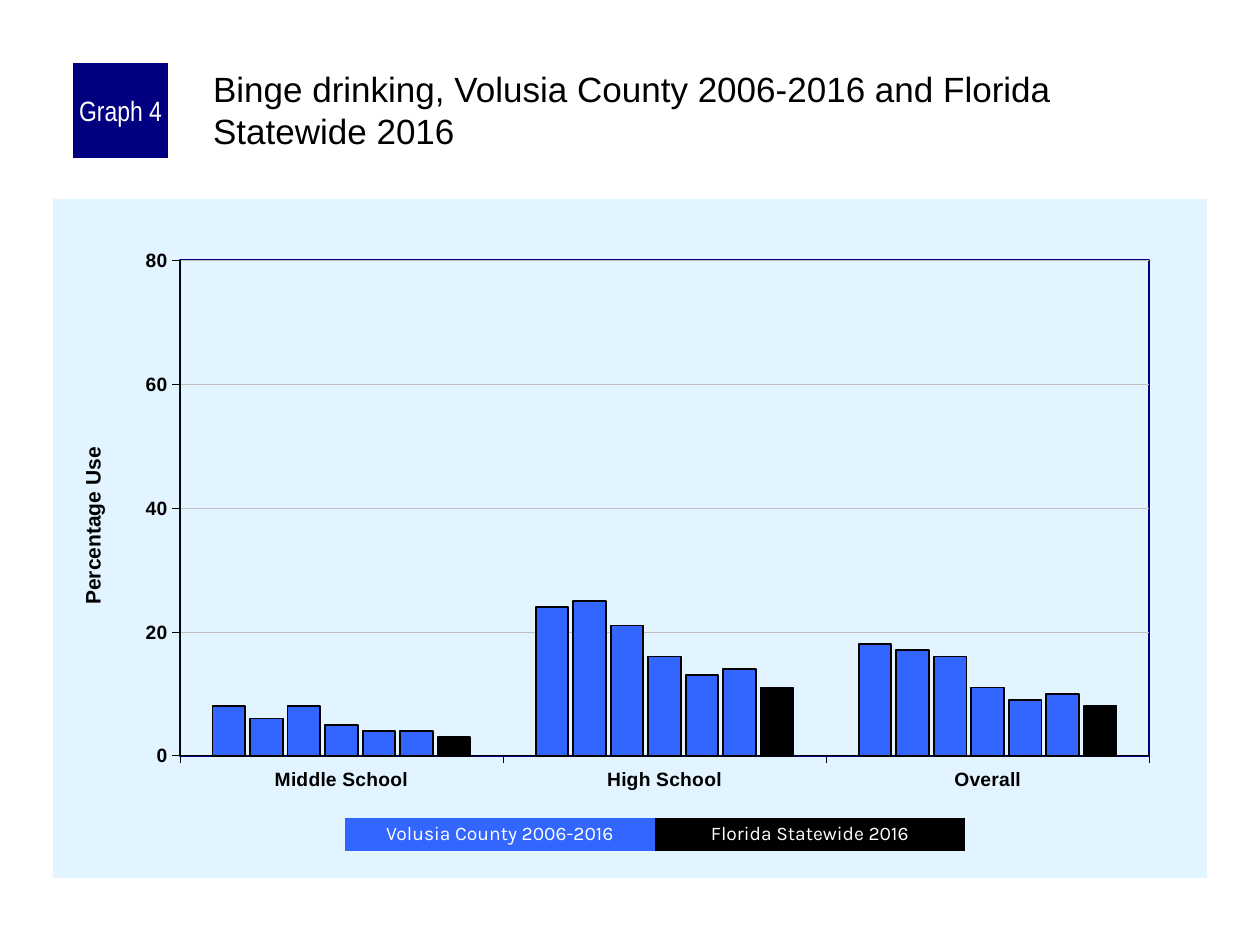
from pptx import Presentation
from pptx.chart.data import CategoryChartData
from pptx.dml.color import RGBColor
from pptx.enum.chart import XL_CHART_TYPE as ChartType, XL_TICK_MARK as TickMark
from pptx.enum.shapes import MSO_SHAPE as Shape
from pptx.enum.text import MSO_ANCHOR as Anchor, MSO_AUTO_SIZE as AutoSize, PP_ALIGN as Align
from pptx.oxml import parse_xml
from pptx.oxml.ns import nsdecls, qn
from pptx.util import Emu, Pt

PX = 914400 / 126

WHITE = RGBColor(0xFF, 0xFF, 0xFF)
BLACK = RGBColor(0x00, 0x00, 0x00)
NAVY = RGBColor(0x00, 0x00, 0x80)
BLUE = RGBColor(0x33, 0x66, 0xFF)
PALE_BLUE = RGBColor(0xE1, 0xF4, 0xFF)
GRID_GREY = RGBColor(0xC0, 0xC0, 0xC0)

SCHOOLS = ["Middle School", "High School", "Overall"]
# One row per survey: the county over the years, then the state
COUNTY_USE = [(8, 24, 18), (6, 25, 17), (8, 21, 16), (5, 16, 11), (4, 13, 9), (4, 14, 10)]
STATE_USE = (3, 11, 8)


def px(*lengths):
    return [Emu(round(length * PX)) for length in lengths]


def style_font(font, size, color, name="Arial", bold=False):
    font.name = name
    font.size = Pt(size)
    font.bold = bold
    font.color.rgb = color


def style_line(line, color, width):
    line.color.rgb = color
    line.width = Pt(width)


def set_insets(frame, left, top, right, bottom):
    frame.margin_left, frame.margin_top, frame.margin_right, frame.margin_bottom = px(
        left, top, right, bottom)


def add_title(slide, text, box):
    title = slide.shapes.title
    title.left, title.top, title.width, title.height = px(*box)
    frame = title.text_frame
    frame.auto_size = AutoSize.NONE
    frame.word_wrap = True
    frame.vertical_anchor = Anchor.TOP
    set_insets(frame, 4, 4, 0, 0)
    paragraph = frame.paragraphs[0]
    paragraph.alignment = Align.LEFT
    run = paragraph.add_run()
    run.text = text
    style_font(run.font, 20, BLACK)


def add_label(slide, text, box, fill, size, font_name, spacing=1.0):
    label = slide.shapes.add_shape(Shape.RECTANGLE, *px(*box))
    label.shadow.inherit = False
    label.fill.solid()
    label.fill.fore_color.rgb = fill
    label.line.fill.background()
    frame = label.text_frame
    frame.word_wrap = True
    frame.vertical_anchor = Anchor.MIDDLE
    set_insets(frame, 6, 0, 6, 0)
    paragraph = frame.paragraphs[0]
    paragraph.alignment = Align.CENTER
    paragraph.line_spacing = spacing
    run = paragraph.add_run()
    run.text = text
    style_font(run.font, size, WHITE, font_name)


def layout_xml(target="", **fractions):
    inner = f'<c:layoutTarget val="{target}"/>' if target else ""
    inner += "".join(f'<c:{key}Mode val="edge"/>' for key in "xy")
    inner += "".join(f'<c:{key} val="{value}"/>' for key, value in fractions.items())
    return parse_xml(
        f'<c:layout {nsdecls("c")}><c:manualLayout>{inner}</c:manualLayout></c:layout>')


def replace_layout(parent, layout, index):
    for old in parent.findall(qn("c:layout")):
        parent.remove(old)
    parent.insert(index, layout)


def style_axis(axis):
    axis.major_tick_mark = TickMark.OUTSIDE
    axis.minor_tick_mark = TickMark.NONE
    style_font(axis.tick_labels.font, 11, BLACK, bold=True)
    style_line(axis.format.line, BLACK, 0.25)


def style_areas(chart):
    """Place the plot and axis title, and paint the panel and plot frame."""
    chart_xml = chart.element.find(qn("c:chart"))
    plot_area = chart_xml.find(qn("c:plotArea"))
    replace_layout(plot_area, layout_xml("inner", x=0.11, y=0.09, w=0.84, h=0.73), 0)
    axis_title = plot_area.find(qn("c:valAx")).find(qn("c:title"))
    replace_layout(axis_title, layout_xml(x=0.02, y=0.36), 1)
    plot_area.append(parse_xml(
        f'<c:spPr {nsdecls("c", "a")}><a:noFill/><a:ln w="12700"><a:solidFill>'
        f'<a:srgbClr val="{NAVY}"/></a:solidFill></a:ln></c:spPr>'))
    chart_xml.addnext(parse_xml(
        f'<c:spPr {nsdecls("c", "a")}><a:solidFill><a:srgbClr val="{PALE_BLUE}"/>'
        '</a:solidFill><a:ln><a:noFill/></a:ln></c:spPr>'))


def add_use_chart(slide, box):
    data = CategoryChartData()
    data.categories = SCHOOLS
    for number, values in enumerate(COUNTY_USE + [STATE_USE], start=1):
        data.add_series(f"Series {number}", values)
    chart = slide.shapes.add_chart(ChartType.COLUMN_CLUSTERED, *px(*box), data).chart
    chart.has_legend = False
    chart.has_title = False
    style_font(chart.font, 8, BLACK)

    # Columns
    plot = chart.plots[0]
    plot.vary_by_categories = False
    plot.gap_width = 200
    plot.overlap = -15
    for index, series in enumerate(plot.series):
        series.format.fill.solid()
        series.format.fill.fore_color.rgb = BLUE if index < len(COUNTY_USE) else BLACK
        style_line(series.format.line, BLACK, 1)

    # Axes
    percent_axis = chart.value_axis
    for axis in (chart.category_axis, percent_axis):
        style_axis(axis)
    percent_axis.minimum_scale = 0
    percent_axis.maximum_scale = 80
    percent_axis.major_unit = 20
    style_line(percent_axis.major_gridlines.format.line, GRID_GREY, 0.25)
    run = percent_axis.axis_title.text_frame.paragraphs[0].add_run()
    run.text = "Percentage Use"
    style_font(run.font, 12, BLACK, bold=True)

    style_areas(chart)


def main():
    deck = Presentation()
    deck.slide_width, deck.slide_height = px(1260, 945)
    slide = deck.slides.add_slide(deck.slide_layouts[5])

    # Chart panel
    add_use_chart(slide, (53, 199, 1154, 679))

    # Heading
    add_label(slide, "Graph 4", (73, 63, 95, 95), NAVY, 16, "Arial Narrow")
    add_title(slide, "Binge drinking, Volusia County 2006-2016 and Florida Statewide 2016",
              (209, 63, 998, 105))

    # Colour key
    key_left, key_width = 345, 310
    key = [("Volusia County 2006-2016", BLUE), ("Florida Statewide 2016", BLACK)]
    for index, (text, color) in enumerate(key):
        add_label(slide, text, (key_left + index * key_width, 818, key_width, 33),
                  color, 11, "Karla", 0.9)

    deck.save("out.pptx")


if __name__ == "__main__":
    main()
